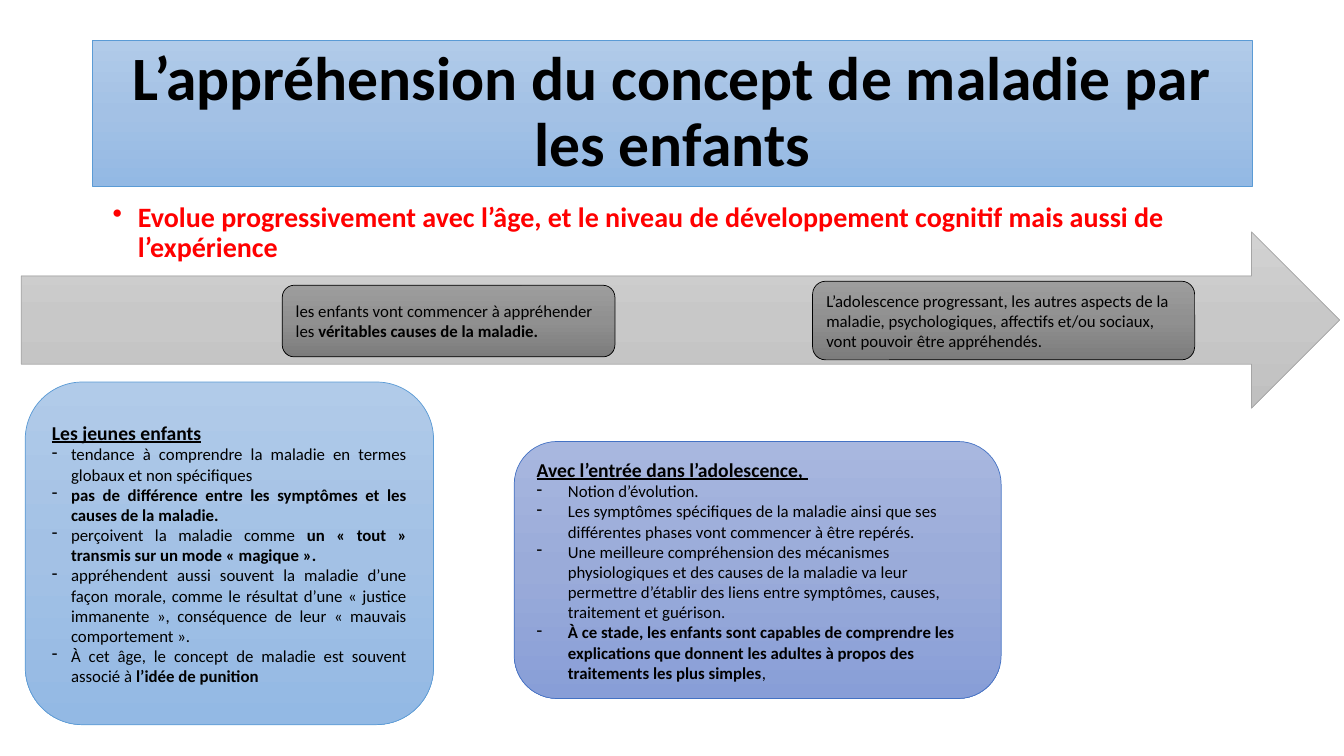
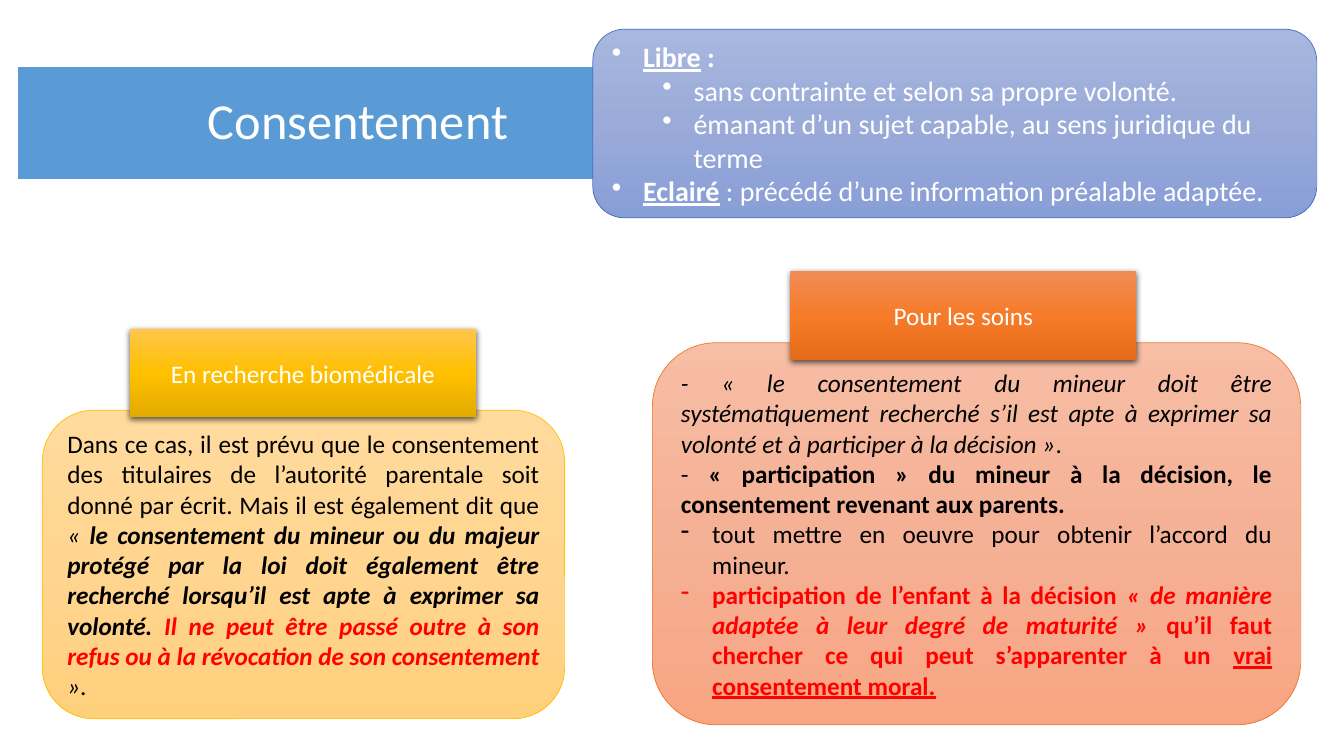
from dataclasses import dataclass

from lxml.etree import SubElement as Sub
from pptx import Presentation
from pptx.dml.color import RGBColor
from pptx.enum.shapes import MSO_SHAPE as Kind
from pptx.enum.text import MSO_ANCHOR as Anchor, MSO_AUTO_SIZE as Auto, PP_ALIGN as Align
from pptx.oxml.ns import qn
from pptx.util import Inches, Pt

WIDE, HIGH = Inches(13.33), Inches(7.5)
PAGE = (0, 0, WIDE, HIGH)
FONT, BLACK, WHITE, RED = "Calibri", "000000", "FFFFFF", "FF0000"
TITLE_ONLY = 5
LEFT, MID, JUST = Align.LEFT, Align.CENTER, Align.JUSTIFY

# Each look: fill colours from top to bottom, then the outline
BLUE = (["B1CBE9", "A3C1E5", "93B9E4"], "5B9BD5")
INDIGO = (["A8B7DF", "9AABD9", "889ED7"], "4472C4")
SILVER = (["D2D2D2", "C8C8C8", "C0C0C0"], "A5A5A5")
GREY = (["9D9D9D", "909090", "7C7C7C"], BLACK)
SAND = (["FFDB9E", "FFD590", "FFD07C"], "FFC000")
PEACH = (["F7BDA5", "F5B196", "F8A582"], "ED7D31")
GOLD = (["FFC64B", "FFC000", "E3AB00"], None)
ORANGE = (["F18C57", "F67B28", "E56C19"], None)
FLAT = (["5B9BD5"], WHITE)


@dataclass
class Para:
    """Runs are (text, style); style letters: b, i, u and r for red."""
    runs: list
    size: int = 12
    align: int = LEFT
    mark: str = ""
    hang: float = 0.31
    level: int = 0
    space: float = 1.0


def rgb(code):
    return RGBColor.from_string(code)


def part(box, x, y, w, h):
    """Percentages of a box, as a box on the slide."""
    left, top, wide, high = box
    return (int(left + wide * x / 100), int(top + high * y / 100),
            int(wide * w / 100), int(high * h / 100))


def dress(shape, look, width=0.5):
    shades, edge = look
    if len(shades) == 1:
        shape.fill.solid()
        shape.fill.fore_color.rgb = rgb(shades[0])
    else:
        shape.fill.gradient()
        shape.fill.gradient_angle = 270
        stops = next(shape._element.spPr.iter(qn("a:gsLst")))
        for old in list(stops):
            stops.remove(old)
        for n, shade in enumerate(shades):
            stop = Sub(stops, qn("a:gs"), pos=str(n * 100000 // (len(shades) - 1)))
            Sub(stop, qn("a:srgbClr"), val=shade)
    if edge:
        shape.line.color.rgb = rgb(edge)
        shape.line.width = Pt(width)
    else:
        shape.line.fill.background()


def write(shape, paras, color=BLACK, anchor=Anchor.MIDDLE):
    frame = shape.text_frame
    frame.word_wrap, frame.auto_size = True, Auto.NONE
    frame.vertical_anchor = anchor
    for n, item in enumerate(paras):
        para = frame.paragraphs[0] if n == 0 else frame.add_paragraph()
        para.alignment, para.level = item.align, item.level
        if item.mark:
            props = para._p.get_or_add_pPr()
            hang = Inches(item.hang)
            props.set("marL", str(hang + Inches(0.5) * item.level))
            props.set("indent", str(-hang))
            Sub(props, qn("a:buChar"), char=item.mark)
        para.line_spacing = item.space
        font = para.font
        font.name, font.size = FONT, Pt(item.size)
        font.color.rgb = rgb(color)
        for text, style in item.runs:
            run = para.add_run()
            run.text = text
            for key, name in (("b", "bold"), ("i", "italic"), ("u", "underline")):
                if key in style:
                    setattr(run.font, name, True)
            if "r" in style:
                run.font.color.rgb = rgb(RED)


def card(slide, box, look, paras=(), kind=Kind.ROUNDED_RECTANGLE, color=BLACK):
    shape = slide.shapes.add_shape(kind, *box)
    shape.shadow.inherit = False
    dress(shape, look)
    write(shape, paras, color)
    return shape


def banner(slide, box, look, text, size, style="", color=BLACK, width=0.5):
    title = slide.shapes.title
    title.left, title.top, title.width, title.height = box
    dress(title, look, width)
    write(title, [Para([(text, style)], size, MID, space=0.9)], color)


def claim(slide, box, text):
    note = slide.shapes.add_textbox(*box)
    line = Para([(text, "b")], 20, mark="•", hang=0.25, space=0.9)
    write(note, [line], RED, Anchor.TOP)


def timeline(slide, box, steps):
    card(slide, box, SILVER, kind=Kind.RIGHT_ARROW)
    for place, runs in steps:
        card(slide, part(box, *place), GREY, [Para(runs)])


def stage(slide, box, look, head, items, align, hang):
    paras = [Para([(head, "bu")], 14)]
    paras += [Para(runs, align=align, mark="-", hang=hang) for runs in items]
    card(slide, box, look, paras)


def topic(slide, box, shift, drop, looks, name, paras):
    """A panel with a raised tag; shift and drop are shares of the box."""
    panel, top = looks
    card(slide, part(box, 0, drop, 100, 100 - drop), panel, paras)
    left, high = part(box, shift, 0, 0, 0)[:2]
    size = part(PAGE, 0, 0, 25.73, 11.73)[2:]
    tag = card(slide, (left, high, *size), top, [Para([(name, "")], 18, MID)],
               Kind.RECTANGLE, WHITE)
    effects = tag._element.spPr.find(qn("a:effectLst"))
    shade = Sub(effects, qn("a:outerShdw"), blurRad=str(Pt(4.5)), dist=str(Pt(1.5)),
                dir="5400000", algn="ctr", rotWithShape="0")
    tint = Sub(shade, qn("a:srgbClr"), val=BLACK)
    Sub(tint, qn("a:alpha"), val="63000")


def illness(slide):
    banner(slide, part(PAGE, 6.9, 5.33, 86.27, 19.33), BLUE,
           "L’appréhension du concept de maladie par les enfants", 44, "b")
    claim(slide, part(PAGE, 7.65, 26.27, 86.27, 10.67),
          "Evolue progressivement avec l’âge, et le niveau de développement cognitif "
          "mais aussi de l’expérience")
    timeline(slide, part(PAGE, 1.58, 30.67, 98.1, 23.33), [
        ((19.8, 30.3, 25.23, 40.6),
         [("les enfants vont commencer à appréhender les ", ""),
          ("véritables causes de la maladie.", "b")]),
        ((60.02, 28, 28.98, 44.6),
         [("L’adolescence progressant, les autres aspects de la maladie, psychologiques, "
           "affectifs et/ou sociaux, vont pouvoir être appréhendés.", "")]),
    ])
    stage(slide, part(PAGE, 1.88, 50.53, 30.38, 45.33), BLUE, "Les jeunes enfants", [
        [("tendance à comprendre la maladie en termes globaux et non spécifiques", "")],
        [("pas de différence entre les symptômes et les causes de la maladie. ", "b")],
        [("perçoivent la maladie comme ", ""),
         ("un « tout » transmis sur un mode « magique ». ", "b")],
        [("appréhendent aussi souvent la maladie d’une façon morale, comme le résultat "
          "d’une « justice immanente », conséquence de leur « mauvais comportement ».", "")],
        [("À cet âge, le concept de maladie est souvent associé à ", ""),
         ("l’idée de punition", "b")],
    ], JUST, 0.19)
    stage(slide, part(PAGE, 38.26, 58.4, 36.23, 34), INDIGO,
          "Avec l’entrée dans l’adolescence, ", [
        [("Notion d’évolution.", "")],
        [("Les symptômes spécifiques de la maladie ainsi que ses différentes phases vont "
          "commencer à être repérés.", "")],
        [("Une meilleure compréhension des mécanismes physiologiques et des causes de la "
          "maladie va leur permettre d’établir des liens entre symptômes, causes, "
          "traitement et guérison.", "")],
        [("À ce stade, les enfants sont capables de comprendre les explications que "
          "donnent les adultes à propos des traitements les plus simples", "b"), (",", "")],
    ], LEFT, 0.31)


def consent(slide):
    banner(slide, part(PAGE, 1.28, 8.67, 51.54, 15.2), FLAT, "Consentement ", 36,
           color=WHITE, width=1.5)
    card(slide, part(PAGE, 44.11, 3.87, 53.86, 24.93), INDIGO, [
        Para(runs, 20, mark="•", level=level) for level, runs in (
            (0, [("Libre", "bu"), (" :", "b")]),
            (1, [("sans contrainte et selon sa propre volonté.", "")]),
            (1, [("émanant d’un sujet capable, au sens juridique du terme", "")]),
            (0, [("Eclairé", "bu"), (" : précédé d’une information préalable adaptée.", "")]),
        )], color=WHITE)
    topic(slide, part(PAGE, 3.15, 43.47, 38.86, 51.6), 16.8, 20.93, (SAND, GOLD),
          "En recherche biomédicale", [Para([
              ("Dans ce cas, il est prévu que le consentement des titulaires de l’autorité "
               "parentale soit donné par écrit. Mais il est également dit que ", ""),
              ("« ", "i"),
              ("le consentement du mineur ou du majeur protégé par la loi doit également "
               "être recherché lorsqu’il est apte à exprimer sa volonté. ", "bi"),
              ("Il ne peut être passé outre à son refus ou à la révocation de son "
               "consentement ", "bir"),
              ("»", "i"), (". ", "")], 18, JUST)])
    topic(slide, part(PAGE, 48.54, 35.87, 48.24, 60), 21.31, 15.78, (PEACH, ORANGE),
          "Pour les soins", [Para(runs, 18, JUST, mark) for mark, runs in (
              ("", [("- « le consentement du mineur doit être systématiquement recherché "
                     "s’il est apte à exprimer sa volonté et à participer à la décision »",
                     "i"), (".", "")]),
              ("", [("- ", ""), ("« participation » du mineur à la décision, le "
                                 "consentement revenant aux parents. ", "b")]),
              ("-", [("tout mettre en oeuvre pour obtenir l’accord du mineur.", "")]),
              ("-", [("participation de l’enfant à la décision ", "br"),
                     ("« de manière adaptée à leur degré de maturité » ", "bir"),
                     ("qu’il faut chercher ce qui peut s’apparenter à un ", "br"),
                     ("vrai consentement moral.", "bur")]),
          )])


def main():
    deck = Presentation()
    deck.slide_width, deck.slide_height = WIDE, HIGH
    for fill in (illness, consent):
        fill(deck.slides.add_slide(deck.slide_layouts[TITLE_ONLY]))
    deck.save("out.pptx")


if __name__ == "__main__":
    main()
